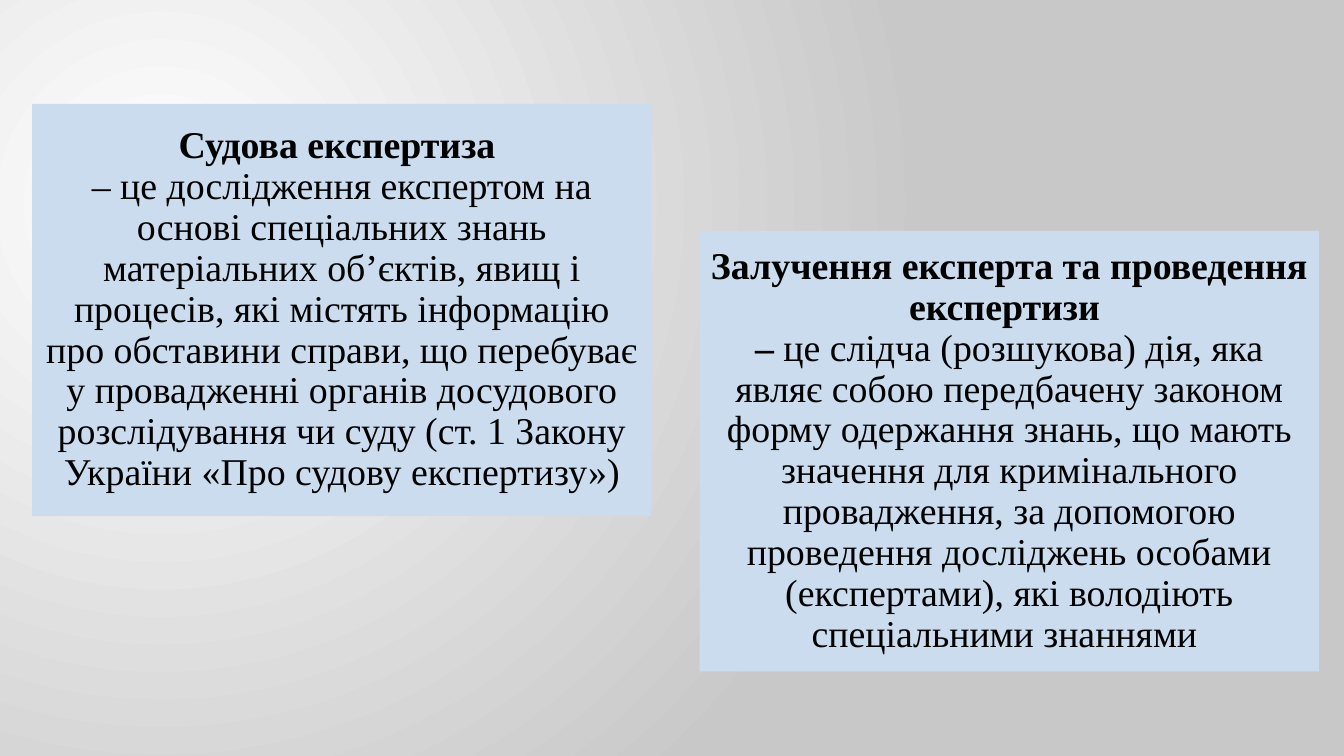
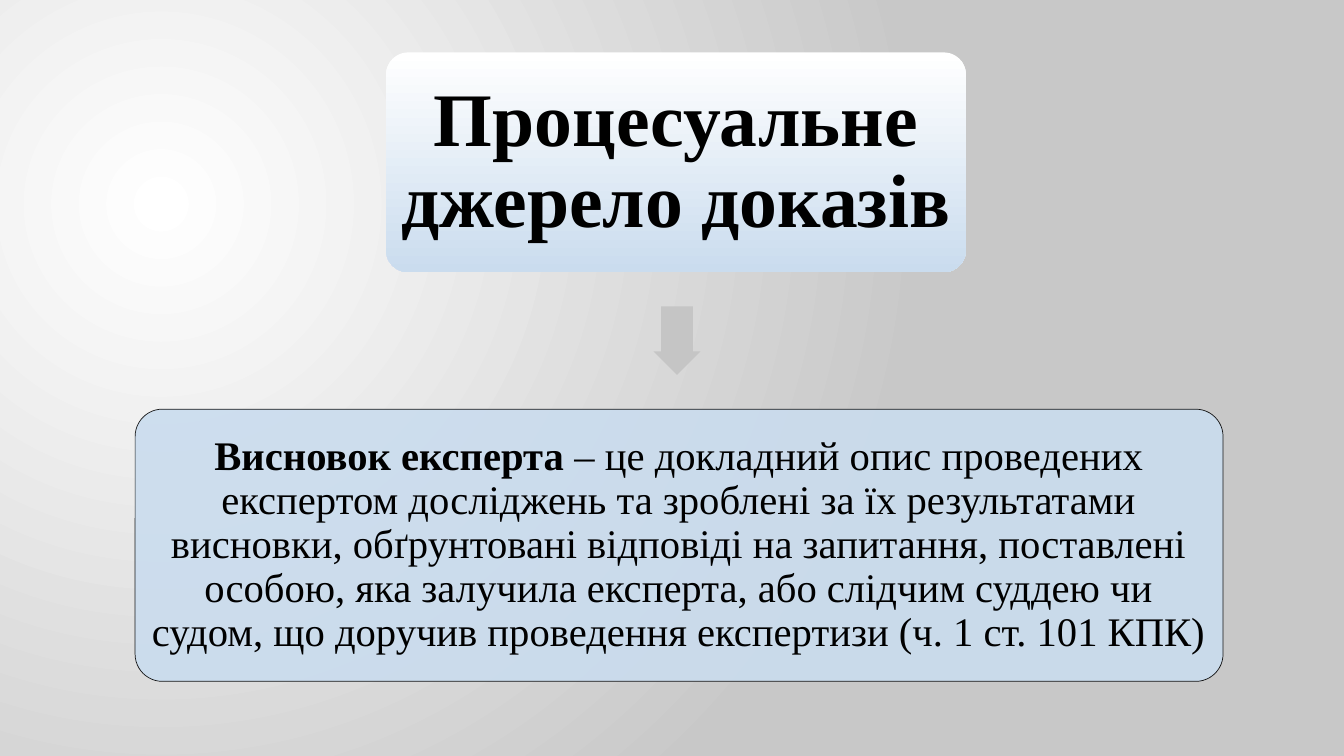
"""Build two slides on forensic examination and the expert's conclusion."""
import pptx
import pptx.dml.color
import pptx.enum.shapes
import pptx.enum.text
import pptx.oxml.ns
import pptx.util
from lxml import etree

Inches = pptx.util.Inches
Shape = pptx.enum.shapes.MSO_SHAPE
qn = pptx.oxml.ns.qn


def rgb(code):
    """Turn a hex string into a colour."""
    return pptx.dml.color.RGBColor.from_string(code)


class Deck:
    """Hold the shared style and the current slide."""

    FONT = "Times New Roman"
    TEXT = "000000"
    PANEL = "CADCEE"
    WHITE = "FFFFFF"
    BACKDROP = "C8C8C8"
    ARROW = "C5C5C5"
    TITLE_ONLY, BLANK = 5, 6

    def __init__(self):
        """Create the presentation with its radial background."""
        self.prs = pptx.Presentation()
        self.prs.slide_width = Inches(13.33)
        self.prs.slide_height = Inches(7.5)
        self.slide = None
        master = self.prs.slide_master
        self.gradient(master.background.fill, self.WHITE, self.BACKDROP)
        linear = next(master.element.iter(qn("a:lin")))
        radial = etree.Element(qn("a:path"), {"path": "circle"})
        etree.SubElement(radial, qn("a:fillToRect"),
                         {"l": "50000", "t": "55000", "r": "125000", "b": "100000"})
        linear.getparent().replace(linear, radial)

    def gradient(self, fill, start, end):
        """Apply a two-colour gradient that runs downwards."""
        fill.gradient()
        fill.gradient_angle = 270
        for stop, code in zip(fill.gradient_stops, (start, end)):
            stop.color.rgb = rgb(code)

    def add_slide(self, layout):
        """Start a new slide."""
        self.slide = self.prs.slides.add_slide(self.prs.slide_layouts[layout])

    def shape(self, kind, box, color, adjustments=()):
        """Draw a flat shape without outline."""
        shape = self.slide.shapes.add_shape(kind, *map(Inches, box))
        shape.shadow.inherit = False
        shape.fill.solid()
        shape.fill.fore_color.rgb = rgb(color)
        shape.line.fill.background()
        for index, value in enumerate(adjustments):
            shape.adjustments[index] = value
        return shape

    def set_text(self, shape, size, inset, runs):
        """Set one centred paragraph of (text, bold) runs."""
        frame = shape.text_frame
        frame.word_wrap = True
        frame.auto_size = pptx.enum.text.MSO_AUTO_SIZE.NONE
        frame.vertical_anchor = pptx.enum.text.MSO_ANCHOR.MIDDLE
        frame.margin_left = frame.margin_right = Inches(inset)
        frame.margin_top = frame.margin_bottom = Inches(inset)
        paragraph = frame.paragraphs[0]
        paragraph.alignment = pptx.enum.text.PP_ALIGN.CENTER
        paragraph.line_spacing = 0.9
        paragraph.font.name = self.FONT
        paragraph.font.size = pptx.util.Pt(size)
        paragraph.font.color.rgb = rgb(self.TEXT)
        for text, bold in runs:
            for index, line in enumerate(text.split("\n")):
                if index:
                    paragraph.add_line_break()
                if line:
                    run = paragraph.add_run()
                    run.text = line
                    run.font.bold = bold

    def definition(self, box, runs):
        """Add a rectangular panel with a definition."""
        self.set_text(self.shape(Shape.RECTANGLE, box, self.PANEL), 27, 0.11, runs)

    def title_card(self, box, text):
        """Set the title on a rounded gradient card."""
        card = self.shape(Shape.ROUNDED_RECTANGLE, box, self.PANEL, [0.1])
        self.gradient(card.fill, self.WHITE, self.PANEL)
        title = self.slide.shapes.title
        card.element.addnext(title.element)
        left, top, width, height = box
        title.left, title.top = Inches(left + 0.07), Inches(top + 0.07)
        title.width, title.height = Inches(width - 0.14), Inches(height - 0.14)
        self.set_text(title, 54, 0.07, [(text, True)])

    def down_arrow(self, box):
        """Add a block arrow pointing down."""
        self.shape(Shape.DOWN_ARROW, box, self.ARROW, [0.67, 0.5])

    def outlined_card(self, box, runs):
        """Add a translucent rounded card with a thin outline."""
        card = self.shape(Shape.ROUNDED_RECTANGLE, box, self.PANEL, [0.1])
        card.line.color.rgb = rgb(self.TEXT)
        card.line.width = pptx.util.Pt(0.5)
        for color in list(card.element.spPr.iter(qn("a:srgbClr"))):
            etree.SubElement(color, qn("a:alpha"), {"val": "90000"})
        self.set_text(card, 29, 0.04, runs)


def main():
    """Build and save the slides."""
    deck = Deck()

    deck.add_slide(Deck.BLANK)
    deck.definition((0.32, 1.03, 6.14, 4.09), [
        ("Судова експертиза \n", True),
        ("– це дослідження експертом на основі спеціальних знань матеріальних "
         "об’єктів, явищ і процесів, які містять інформацію про обставини справи, "
         "що перебуває у провадженні органів досудового розслідування чи суду "
         "(ст. 1 Закону України «Про судову експертизу»)", False),
    ])
    deck.definition((6.94, 2.29, 6.14, 4.37), [
        ("Залучення експерта та проведення експертизи \n– ", True),
        ("це слідча (розшукова) дія, яка являє собою передбачену законом форму "
         "одержання знань, що мають значення для кримінального провадження, "
         "за допомогою проведення досліджень особами (експертами), які володіють "
         "спеціальними знаннями ", False),
    ])

    deck.add_slide(Deck.TITLE_ONLY)
    deck.title_card((3.83, 0.52, 5.75, 2.18), "Процесуальне джерело доказів")
    deck.down_arrow((6.48, 3.04, 0.47, 0.68))
    deck.outlined_card((1.34, 4.06, 10.79, 2.7), [
        ("Висновок експерта", True),
        (" – це докладний опис проведених експертом досліджень та зроблені за їх "
         "результатами висновки, обґрунтовані відповіді на запитання, поставлені "
         "особою, яка залучила експерта, або слідчим суддею чи судом, що доручив "
         "проведення експертизи (ч. 1 ст. 101 КПК)", False),
    ])

    deck.prs.save("out.pptx")


if __name__ == "__main__":
    main()
